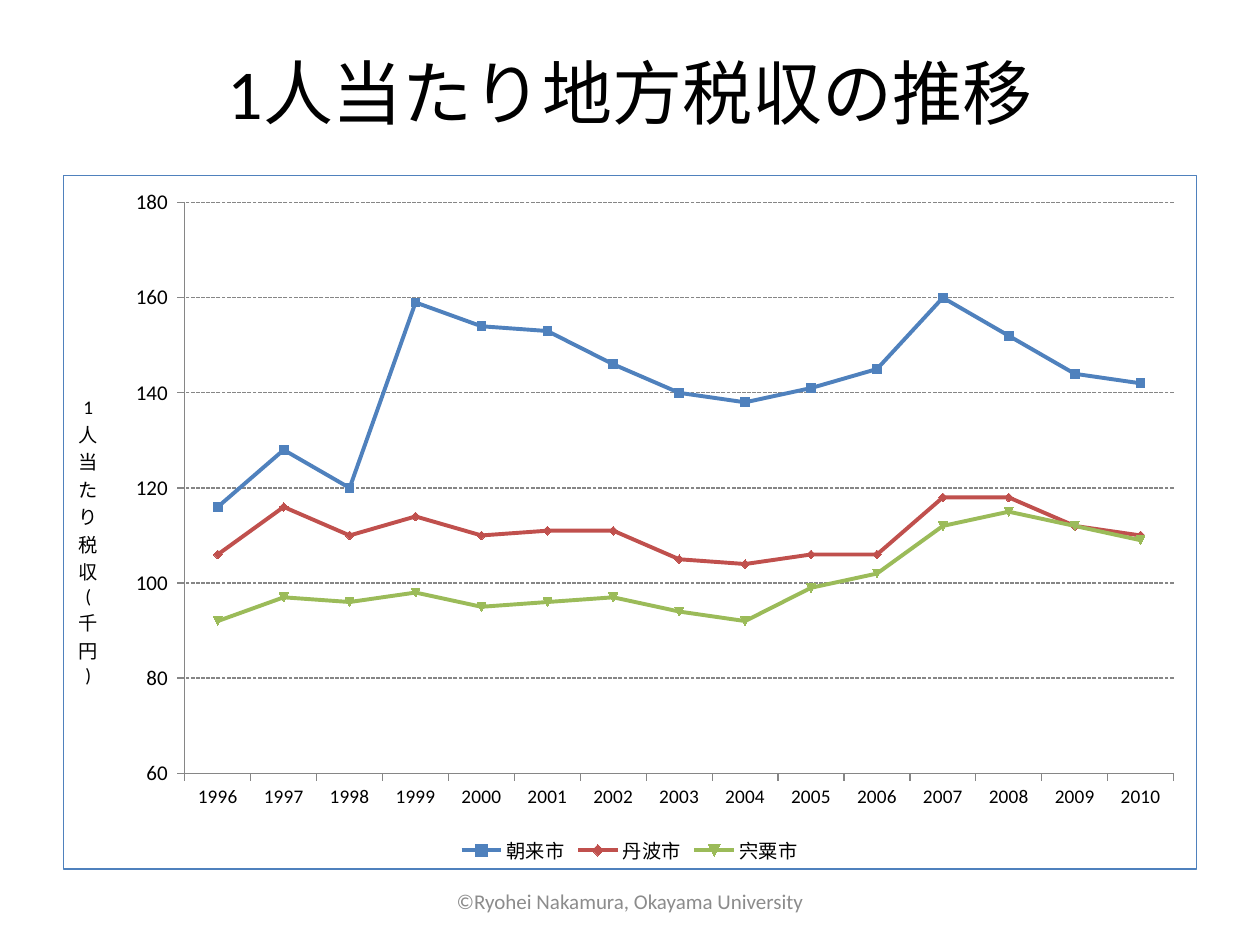
from pptx import Presentation
from pptx.chart.data import CategoryChartData
from pptx.dml.color import RGBColor
from pptx.enum.chart import XL_CHART_TYPE, XL_LEGEND_POSITION, XL_MARKER_STYLE, XL_TICK_MARK
from pptx.enum.dml import MSO_LINE
from pptx.enum.text import MSO_ANCHOR, PP_ALIGN
from pptx.oxml import parse_xml
from pptx.oxml.ns import nsdecls
from pptx.util import Pt

FONT = "Calibri"
BLACK = RGBColor(0x00, 0x00, 0x00)
FOOTER_GRAY = RGBColor(0x8C, 0x8C, 0x8C)
AXIS_GRAY = RGBColor(0x86, 0x86, 0x86)
BLUE = RGBColor(0x4F, 0x81, 0xBD)
RED = RGBColor(0xC0, 0x50, 0x4D)
GREEN = RGBColor(0x9B, 0xBB, 0x59)

YEARS = [str(year) for year in range(1996, 2011)]
CITIES = [
    ("朝来市", BLUE, (116, 128, 120, 159, 154, 153, 146, 140, 138, 141, 145, 160, 152, 144, 142)),
    ("丹波市", RED, (106, 116, 110, 114, 110, 111, 111, 105, 104, 106, 106, 118, 118, 112, 110)),
    ("宍粟市", GREEN, (92, 97, 96, 98, 95, 96, 97, 94, 92, 99, 102, 112, 115, 112, 109)),
]


def add_centered_text(slide, box, text, size, color):
    frame = slide.shapes.add_textbox(*map(Pt, box)).text_frame
    frame.word_wrap = True
    frame.vertical_anchor = MSO_ANCHOR.MIDDLE
    paragraph = frame.paragraphs[0]
    paragraph.text = text
    paragraph.alignment = PP_ALIGN.CENTER
    style_font(paragraph.font, size, color)


def style_font(font, size, color=BLACK):
    font.name = FONT
    font.size = Pt(size)
    font.bold = False
    font.color.rgb = color


def set_layout(parent, position, **fractions):
    for layout in parent.xpath("c:layout"):
        parent.remove(layout)
    modes = "".join(f'<c:{axis}Mode val="edge"/>' for axis in "xy")
    target = '<c:layoutTarget val="inner"/>' if "w" in fractions else ""
    values = "".join(f'<c:{key} val="{value}"/>' for key, value in fractions.items())
    parent.insert(position, parse_xml(
        f'<c:layout {nsdecls("c")}><c:manualLayout>{target}{modes}{values}'
        "</c:manualLayout></c:layout>"))


def add_border(chart, color, width):
    chart.element.xpath("c:chart")[0].addnext(parse_xml(
        f'<c:spPr {nsdecls("c", "a")}><a:noFill/><a:ln w="{Pt(width)}">'
        f'<a:solidFill><a:srgbClr val="{color}"/></a:solidFill></a:ln></c:spPr>'))


def style_axis(axis, size):
    axis.major_tick_mark = XL_TICK_MARK.OUTSIDE
    axis.minor_tick_mark = XL_TICK_MARK.NONE
    style_font(axis.tick_labels.font, size)
    axis.format.line.color.rgb = AXIS_GRAY
    axis.format.line.width = Pt(0.75)


def style_value_axis(axis):
    style_axis(axis, 12)
    axis.minimum_scale = 60
    axis.maximum_scale = 180
    axis.major_unit = 20
    axis.tick_labels.number_format = "#,##0_ "
    axis.tick_labels.number_format_is_linked = False
    gridline = axis.major_gridlines.format.line
    gridline.color.rgb = AXIS_GRAY
    gridline.width = Pt(0.75)
    gridline.dash_style = MSO_LINE.SQUARE_DOT
    title = axis.axis_title
    caption = title.text_frame.paragraphs[0]
    caption.text = "1人当たり税収(千円)"
    style_font(caption.font, 11)
    title.element.xpath(".//a:bodyPr")[0].set("vert", "wordArtVert")
    set_layout(title.element, 1, x=0.01, y=0.31)


def style_series(series, color):
    series.smooth = False
    series.format.line.color.rgb = color
    series.format.line.width = Pt(2.25)
    marker = series.marker
    marker.style = XL_MARKER_STYLE.AUTOMATIC
    marker.size = 5
    marker.format.fill.solid()
    marker.format.fill.fore_color.rgb = color
    marker.format.line.color.rgb = color


def add_tax_chart(slide, box):
    data = CategoryChartData(number_format="0")
    data.categories = YEARS
    for city, _, revenue in CITIES:
        data.add_series(city, revenue)
    chart = slide.shapes.add_chart(XL_CHART_TYPE.LINE_MARKERS, *map(Pt, box), data).chart
    chart.has_title = False
    style_font(chart.font, 10)
    add_border(chart, BLUE, 0.75)
    plot = chart.plots[0]
    plot.vary_by_categories = False
    for series, (_, color, _) in zip(plot.series, CITIES):
        style_series(series, color)
    style_axis(chart.category_axis, 11)
    style_value_axis(chart.value_axis)
    chart.has_legend = True
    chart.legend.position = XL_LEGEND_POSITION.BOTTOM
    chart.legend.include_in_layout = False
    style_font(chart.legend.font, 11)
    set_layout(chart.element.xpath("c:chart/c:plotArea")[0], 0, x=0.107, y=0.039, w=0.873, h=0.823)


def main():
    presentation = Presentation()
    presentation.slide_width = Pt(720)
    presentation.slide_height = Pt(540)
    slide = presentation.slides.add_slide(presentation.slide_layouts[6])
    add_centered_text(slide, (36, 21.6, 648, 61.2), "1人当たり地方税収の推移", 40, BLACK)
    add_tax_chart(slide, (36, 100, 648, 397))
    add_centered_text(slide, (246, 500.5, 228, 28.8), "©Ryohei Nakamura, Okayama University", 12, FOOTER_GRAY)
    presentation.save("out.pptx")


if __name__ == "__main__":
    main()
